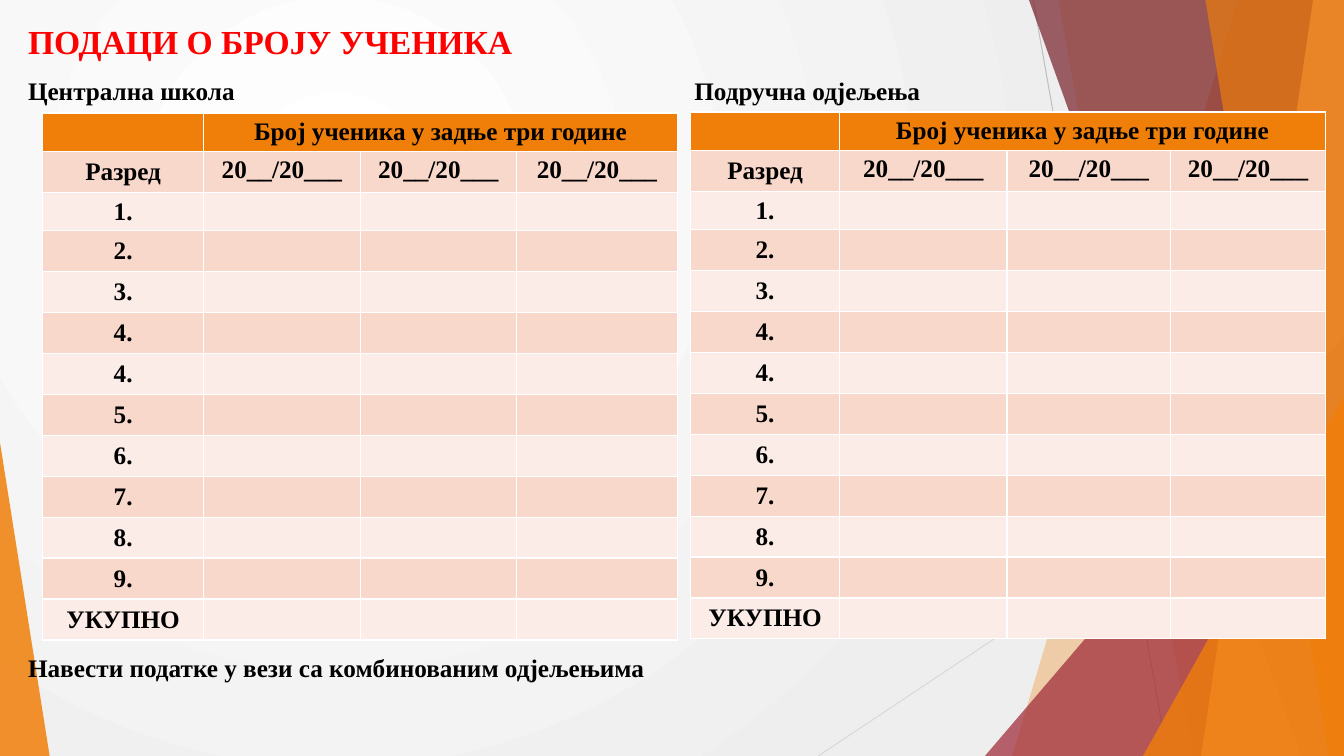
from lxml import etree
from pptx import Presentation
from pptx.dml.color import RGBColor
from pptx.enum.shapes import MSO_CONNECTOR, MSO_SHAPE
from pptx.enum.text import MSO_ANCHOR, MSO_AUTO_SIZE, PP_ALIGN
from pptx.oxml.ns import qn
from pptx.util import Pt

STRAIGHT = MSO_CONNECTOR.STRAIGHT
TRIANGLE = MSO_SHAPE.ISOSCELES_TRIANGLE
TOP, MIDDLE = MSO_ANCHOR.TOP, MSO_ANCHOR.MIDDLE
LEFT, CENTER = PP_ALIGN.LEFT, PP_ALIGN.CENTER
NO_AUTOFIT = MSO_AUTO_SIZE.NONE
WIDTH, HEIGHT = 960, 540
FONT = "Times New Roman"
ORANGE, PINK, PALE = "F07F09", "F9D8CC", "FCECE7"


def color(value):
    return RGBColor.from_string(value)


def style(para, size=18, value="000000", align=LEFT):
    para.alignment = align
    para.font.name = FONT
    para.font.size = Pt(size)
    para.font.bold = True
    para.font.color.rgb = color(value)


deck = Presentation()
deck.slide_width, deck.slide_height = Pt(WIDTH), Pt(HEIGHT)
page = deck.slides.add_slide(deck.slide_layouts[1])

# Background: radial gradient
backdrop = page.background.fill
backdrop.gradient()
for stop, position, value in zip(backdrop.gradient_stops, (0, 1), ("FFFFFF", "EEEEEE")):
    stop.position = position
    stop.color.rgb = color(value)
gradient = page.background._cSld.find(".//" + qn("a:gradFill"))
gradient.remove(gradient.find(qn("a:lin")))
radial = etree.SubElement(gradient, qn("a:path"), path="circle")
etree.SubElement(radial, qn("a:fillToRect"), l="50000", t="50000", r="100000", b="100000")

# Thin grey lines
for x1, y1, x2, y2, value in ((738, 0, 834, 540, "BFBFBF"), (960, 290, 584.5, 540, "D9D9D9")):
    line = page.shapes.add_connector(STRAIGHT, Pt(x1), Pt(y1), Pt(x2), Pt(y2))
    line.line.color.rgb = color(value)
    line.line.width = Pt(0.75)
    etree.SubElement(line._element.spPr, qn("a:effectLst"))

# Bands (top x, bottom x) reach the right edge; triangles are left, top, width, height, apex
facets = (
    ((884, 723), ORANGE, 30),
    ((756, 852), ORANGE, 20),
    ((703.5, 240, 256.5, 300, 1), "9F2936", 72),
    ((735, 929.5), "771F28", 70),
    ((938, 858), "F9B268", 70),
    ((861, 949), ORANGE, 65),
    ((816.5, 283, 143.5, 257, 1), ORANGE, 80),
    ((0, 316, 35.5, 224, 0), ORANGE, 85),
)
for outline, value, opacity in facets:
    if len(outline) == 2:
        top_x, bottom_x = outline
        builder = page.shapes.build_freeform(Pt(top_x), 0)
        corners = ((WIDTH, 0), (WIDTH, HEIGHT), (bottom_x, HEIGHT))
        builder.add_line_segments([(Pt(x), Pt(y)) for x, y in corners], close=True)
        facet = builder.convert_to_shape()
    else:
        *frame, apex = outline
        facet = page.shapes.add_shape(TRIANGLE, *[Pt(length) for length in frame])
        facet.adjustments[0] = apex
    facet.shadow.inherit = False
    facet.line.fill.background()
    facet.fill.solid()
    facet.fill.fore_color.rgb = color(value)
    tint = facet._element.spPr.find(".//" + qn("a:srgbClr"))
    etree.SubElement(tint, qn("a:alpha"), val=str(opacity * 1000))

# Title, captions and closing note
title, body = page.placeholders
branch = page.shapes.add_textbox(0, 0, 0, 0)
texts = (
    (title, (20, 15, 660, 29), ["ПОДАЦИ О БРОЈУ УЧЕНИКА"], 24, "FF0000"),
    (body, (20, 54, 470, 450),
     ["Централна школа", "Навести податке у вези са комбинованим одјељењима"], 18, "000000"),
    (branch, (496, 54, 230, 22), ["Подручна одјељења"], 18, "000000"),
)
for box, frame, lines, size, value in texts:
    page.shapes._spTree.append(box._element)  # in front of the facets
    box.left, box.top, box.width, box.height = [Pt(length) for length in frame]
    text = box.text_frame
    text.text = "\n".join(lines)
    text.word_wrap = True
    text.auto_size = NO_AUTOFIT
    text.vertical_anchor = TOP
    text.margin_left = text.margin_right = text.margin_top = text.margin_bottom = 0
    for para in text.paragraphs:
        style(para, size, value)
        para.space_before = Pt(0)
for para in body.text_frame.paragraphs:
    settings = para._p.get_or_add_pPr()
    settings.set("marL", "0")
    settings.set("indent", "0")
    etree.SubElement(settings, qn("a:buNone"))
    # the schema wants the bullet ahead of the default run properties
    settings.append(settings.find(qn("a:defRPr")))
body.text_frame.paragraphs[1].space_before = Pt(390)

# Pupil tables
grades = ["Разред", "1.", "2.", "3.", "4.", "4.", "5.", "6.", "7.", "8.", "9.", "УКУПНО"]
row_heights = [27.5, 29.3, 27.3] + [29.25] * 10
tables = (
    (30.5, 80.75, (115, 111.75, 111.75, 115)),
    (493.25, 80, (106.5, 119.5, 117, 110.5)),
)
for left, top, column_widths in tables:
    table = page.shapes.add_table(
        len(row_heights), len(column_widths), Pt(left), Pt(top),
        Pt(sum(column_widths)), Pt(sum(row_heights))).table
    for column, width in zip(table.columns, column_widths):
        column.width = Pt(width)
    for row, height in zip(table.rows, row_heights):
        row.height = Pt(height)
    table.cell(0, 1).merge(table.cell(0, 3))
    table.cell(0, 1).text = "Број ученика у задње три године"
    for number, grade in enumerate(grades, 1):
        table.cell(number, 0).text = grade
    for number in range(1, 4):
        table.cell(1, number).text = "20__/20___"
    for row_number, row in enumerate(table.rows):
        for column_number, cell in enumerate(row.cells):
            cell.fill.solid()
            cell.fill.fore_color.rgb = color(
                ORANGE if row_number == 0 else PINK if row_number % 2 else PALE)
            cell.margin_top = cell.margin_bottom = Pt(3)
            years = row_number == 1 and column_number > 0
            cell.vertical_anchor = TOP if years else MIDDLE
            style(cell.text_frame.paragraphs[0], align=CENTER)

deck.save("out.pptx")
